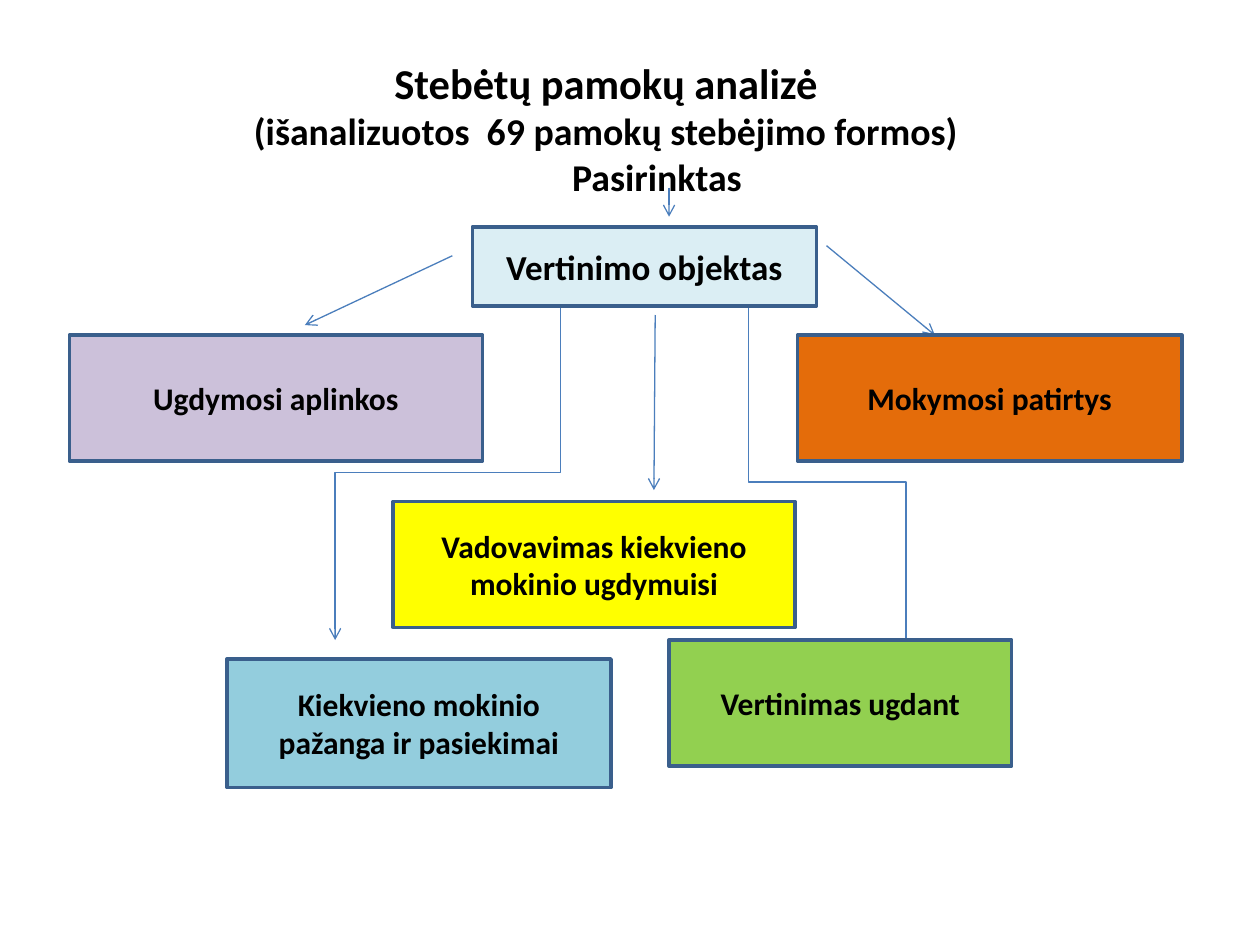
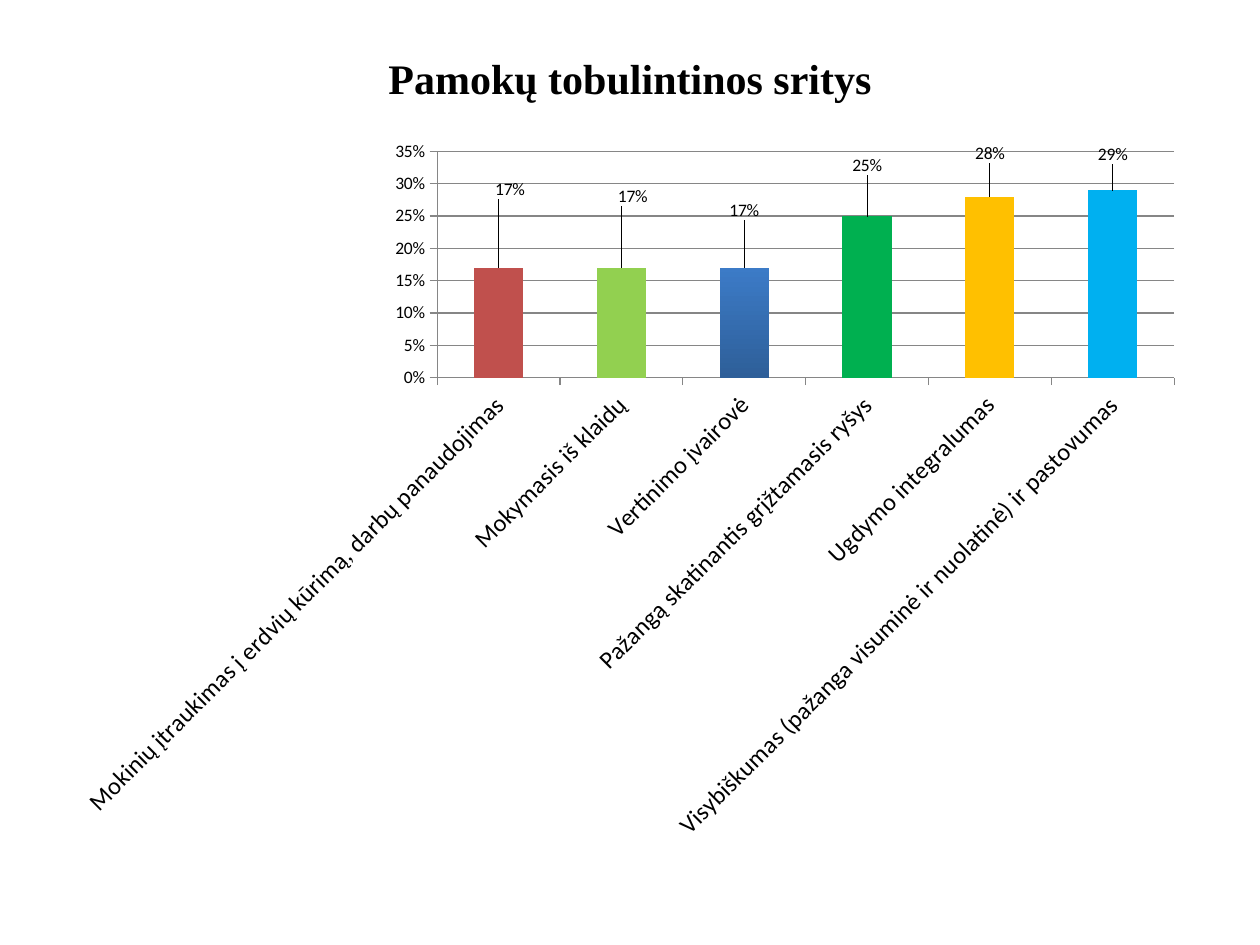
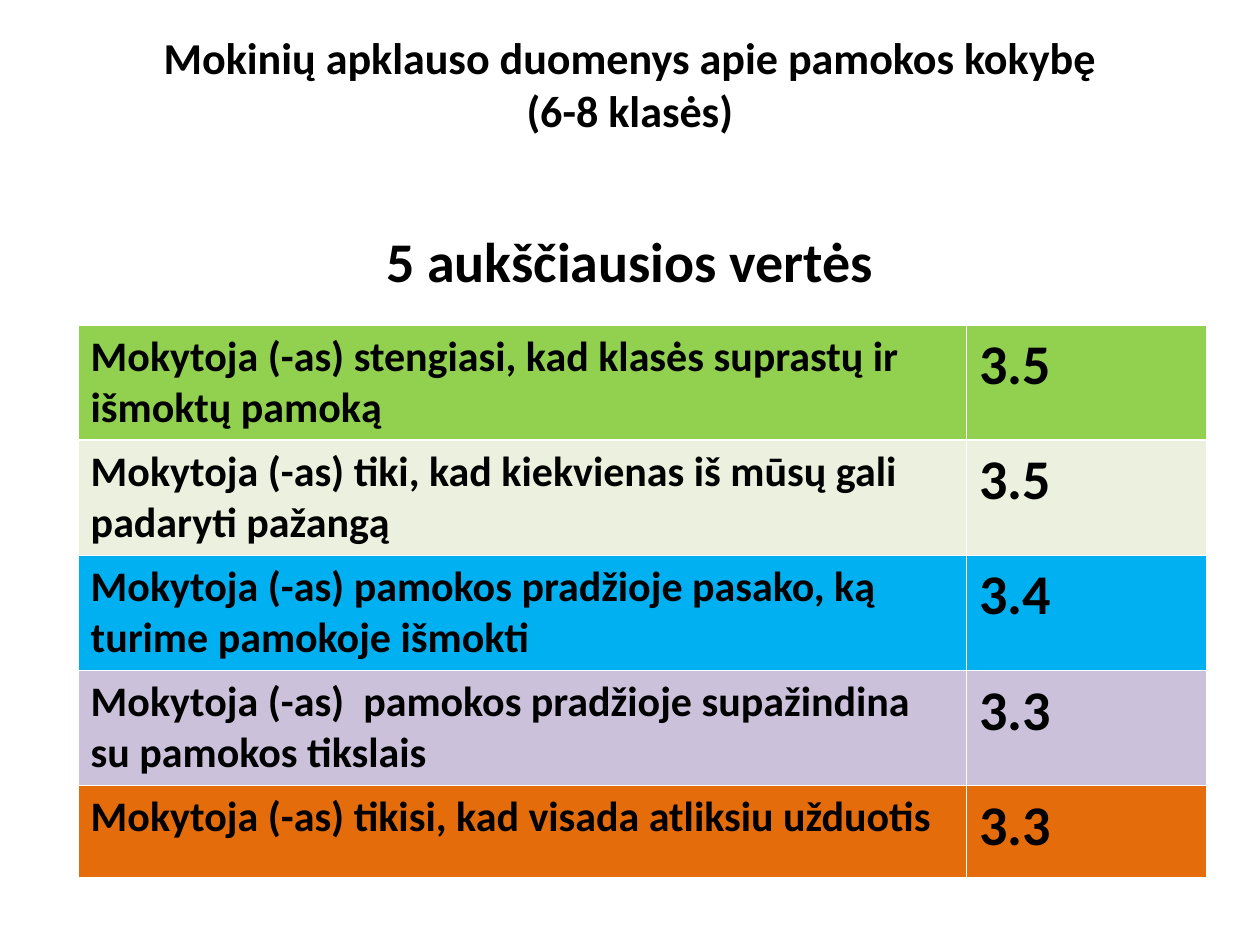
import pptx
import pptx.chart.data
import pptx.dml.color
import pptx.enum.chart
import pptx.enum.shapes
import pptx.enum.text
import pptx.oxml
import pptx.oxml.ns
import pptx.util
from pptx.util import Inches, Pt

BLACK, GREEN, ORANGE, SKY, LILAC = "000000", "92D050", "E46C0A", "00B0F0", "CCC1DA"
BOX_LINE, ARROW, AXIS = "3A5F8C", "4B7EBC", "868686"
FONT = "Calibri"
CENTER = pptx.enum.text.PP_ALIGN.CENTER
MIDDLE = pptx.enum.text.MSO_ANCHOR.MIDDLE
qn = pptx.oxml.ns.qn


def rgb(value):
    return pptx.dml.color.RGBColor.from_string(value)


def write(tf, text, sizes, align=CENTER, font=FONT):
    """Fill a frame with bold black text; sizes go line by line, the last repeats."""
    tf.text = text
    tf.word_wrap = True
    for i, p in enumerate(tf.paragraphs):
        p.alignment = align
        for r in p.runs:
            r.font.name = font
            r.font.size = Pt(sizes[min(i, len(sizes) - 1)])
            r.font.bold = True
            r.font.color.rgb = rgb(BLACK)


prs = pptx.Presentation()
prs.slide_width, prs.slide_height = Inches(10), Inches(7.5)

# Slides and their titles: layout, position, text, sizes, font
titles = [
    (5, (0.31, 0.39, 9, 1.25),
     "Stebėtų pamokų analizė\n(išanalizuotos  69 pamokų stebėjimo formos)\nPasirinktas",
     [24.3, 21.6], FONT),
    (5, (0.5, 0.3, 9, 0.64), "Pamokų tobulintinos sritys", [24], "Times New Roman"),
    (1, (0.5, 0.15, 9, 1.02),
     "Mokinių apklauso duomenys apie pamokos kokybę\n(6-8 klasės)", [25.2], FONT),
]
for layout, box, text, sizes, font in titles:
    s = prs.slides.add_slide(prs.slide_layouts[layout])
    sp = s.shapes.title
    sp.left, sp.top, sp.width, sp.height = [Inches(v) for v in box]
    write(sp.text_frame, text, sizes, font=font)
    sp.text_frame.auto_size = pptx.enum.text.MSO_AUTO_SIZE.NONE
    sp.text_frame.vertical_anchor = MIDDLE
diagram, chart_slide, survey = prs.slides

# Slide 1: the last title line stands right of centre
p = diagram.shapes.title.text_frame.paragraphs[2]
p._p.get_or_add_pPr().set("marL", str(Inches(0.81)))

# Slide 1: arrows, start and end; elbows leave vertically
arrows = [
    (3.59, 2.03, 2.42, 2.58, False),
    (6.56, 1.95, 7.42, 2.66, False),
    (5.31, 1.49, 5.31, 1.72, False),
    (5.2, 2.5, 5.19, 3.89, False),
    (5.94, 2.42, 7.19, 5.23, True),
    (4.45, 2.42, 2.66, 5.08, True),
]
kinds = pptx.enum.shapes.MSO_CONNECTOR
for x1, y1, x2, y2, elbow in arrows:
    if elbow:
        # Turned a quarter back here, then rotated by 90 degrees
        cx, cy, dx, dy = (x1 + x2) / 2, (y1 + y2) / 2, x2 - x1, y2 - y1
        x1, y1, x2, y2 = cx - dy / 2, cy + dx / 2, cx + dy / 2, cy - dx / 2
    cxn = diagram.shapes.add_connector(kinds.ELBOW if elbow else kinds.STRAIGHT,
                                       Inches(x1), Inches(y1), Inches(x2), Inches(y2))
    cxn.line.color.rgb = rgb(ARROW)
    cxn.line.width = Pt(0.75)
    sppr = cxn._element.spPr
    if elbow:
        sppr.find(qn("a:xfrm")).set("rot", "5400000")
    tail = pptx.oxml.parse_xml(f'<a:tailEnd {pptx.oxml.ns.nsdecls("a")} type="arrow"/>')
    sppr.find(qn("a:ln")).append(tail)
    sppr.append(pptx.oxml.parse_xml(f'<a:effectLst {pptx.oxml.ns.nsdecls("a")}/>'))

# Slide 1: boxes
boxes = [
    (3.75, 1.8, 2.73, 0.63, "DBEEF4", 20, "Vertinimo objektas"),
    (0.55, 2.66, 3.28, 1, LILAC, 18, "Ugdymosi aplinkos"),
    (3.12, 3.98, 3.19, 1, "FFFF00", 18, "Vadovavimas kiekvieno mokinio ugdymuisi"),
    (6.33, 2.66, 3.05, 1, ORANGE, 18, "Mokymosi patirtys"),
    (5.31, 5.08, 2.72, 1, GREEN, 18, "Vertinimas ugdant"),
    (1.8, 5.23, 3.05, 1.02, "93CDDD", 18, "Kiekvieno mokinio\npažanga ir pasiekimai"),
]
for x, y, w, h, fill, size, text in boxes:
    sp = diagram.shapes.add_shape(pptx.enum.shapes.MSO_SHAPE.RECTANGLE,
                                  Inches(x), Inches(y), Inches(w), Inches(h))
    sp.shadow.inherit = False
    sp.fill.solid()
    sp.fill.fore_color.rgb = rgb(fill)
    sp.line.color.rgb = rgb(BOX_LINE)
    sp.line.width = Pt(2)
    write(sp.text_frame, text, [size])
    sp.text_frame.vertical_anchor = MIDDLE

# Slide 2: category, value, colour (None for the gradient), label shift
areas = [
    ("Mokinių įtraukimas į erdvių kūrimą, darbų panaudojimas", 0.17, "C0504D", 0.01, -0.09),
    ("Mokymasis iš klaidų", 0.17, GREEN, 0.01, -0.08),
    ("Vertinimo įvairovė", 0.17, None, 0, -0.06),
    ("Pažangą skatinantis grįžtamasis ryšys", 0.25, "00B050", 0, -0.05),
    ("Ugdymo integralumas", 0.28, "FFC000", 0, -0.04),
    ("Visybiškumas (pažanga visuminė ir nuolatinė) ir pastovumas", 0.29, SKY, 0, -0.03),
]
data = pptx.chart.data.CategoryChartData(number_format="0%")
data.categories = [area[0] for area in areas]
data.add_series("Series 1", [area[1] for area in areas])
chart = chart_slide.shapes.add_chart(
    pptx.enum.chart.XL_CHART_TYPE.COLUMN_CLUSTERED,
    Inches(0.5), Inches(1.09), Inches(9), Inches(5.61), data).chart
chart.has_legend = False
chart.has_title = False
chart.font.name = FONT
chart.font.size = Pt(10)
chart.font.color.rgb = rgb(BLACK)

# Slide 2: axes
cat, val = chart.category_axis, chart.value_axis
val.minimum_scale, val.maximum_scale, val.major_unit = 0, 0.35, 0.05
val.tick_labels.number_format = "0%"
val.tick_labels.number_format_is_linked = False
val.has_major_gridlines = True
for line in (cat.format.line, val.format.line, val.major_gridlines.format.line):
    line.color.rgb = rgb(AXIS)
    line.width = Pt(0.75)
for axis in (cat, val):
    axis.major_tick_mark = pptx.enum.chart.XL_TICK_MARK.OUTSIDE
cat.tick_labels.font.size = Pt(14)
cat._element.find(qn("c:txPr")).find(qn("a:bodyPr")).set("rot", "-2700000")

# Slide 2: columns and their raised labels
plot = chart.plots[0]
plot.gap_width = 150
plot.vary_by_categories = False
series = plot.series[0]
series.format.fill.solid()
series.format.fill.fore_color.rgb = rgb("4F81BD")
labels = plot.series[0].data_labels
labels.show_value = True
labels.number_format = "0%"
labels.number_format_is_linked = False
labels.position = pptx.enum.chart.XL_LABEL_POSITION.OUTSIDE_END
for i, (name, value, color, dx, dy) in enumerate(areas):
    fill = series.points[i].format.fill
    if color:
        fill.solid()
        fill.fore_color.rgb = rgb(color)
    else:
        fill.gradient()
        fill.gradient_angle = 90
        for stop, shade in zip(fill.gradient_stops, ("2E5F99", "3C7BC7")):
            stop.color.rgb = rgb(shade)
    label = series.points[i].data_label
    label.position = pptx.enum.chart.XL_LABEL_POSITION.OUTSIDE_END
    dlbl = labels._element.findall(qn("c:dLbl"))[i]
    dlbl.find(qn("c:idx")).addnext(pptx.oxml.parse_xml(
        f'<c:layout {pptx.oxml.ns.nsdecls("c")}><c:manualLayout>'
        f'<c:x val="{dx}"/><c:y val="{dy}"/></c:manualLayout></c:layout>'))

# Slide 2: plot area leaves room for the slanted names
area = chart._chartSpace.chart.plotArea
for old in area.findall(qn("c:layout")):
    area.remove(old)
area.insert(0, pptx.oxml.parse_xml(
    f'<c:layout {pptx.oxml.ns.nsdecls("c")}><c:manualLayout><c:layoutTarget val="inner"/>'
    '<c:xMode val="edge"/><c:yMode val="edge"/><c:x val="0.33"/><c:y val="0.02"/>'
    '<c:w val="0.65"/><c:h val="0.32"/></c:manualLayout></c:layout>'))

# Slide 3: heading above the table
sp = survey.placeholders[1]
sp.left, sp.top, sp.width, sp.height = Inches(0.5), Inches(1.75), Inches(9), Inches(4.95)
write(sp.text_frame, "5 aukščiausios vertės", [32])
ppr = sp.text_frame.paragraphs[0]._p.get_or_add_pPr()
ppr.set("marL", "0")
ppr.set("indent", "0")
ppr.append(pptx.oxml.parse_xml(f'<a:buNone {pptx.oxml.ns.nsdecls("a")}/>'))

# Slide 3: table of the highest values
rows = [
    ("Mokytoja (-as) stengiasi, kad klasės suprastų ir išmoktų pamoką", "3.5", GREEN),
    ("Mokytoja (-as) tiki, kad kiekvienas iš mūsų gali padaryti pažangą", "3.5", "EBF1DE"),
    ("Mokytoja (-as) pamokos pradžioje pasako, ką turime pamokoje išmokti", "3.4", SKY),
    ("Mokytoja (-as)  pamokos pradžioje supažindina su pamokos tikslais", "3.3", LILAC),
    ("Mokytoja (-as) tikisi, kad visada atliksiu užduotis", "3.3", ORANGE),
]
table = survey.shapes.add_table(len(rows), 2, Inches(0.62), Inches(2.58),
                                Inches(8.96), Inches(0.73 * len(rows))).table
table.horz_banding = False
table.columns[0].width, table.columns[1].width = Inches(7.05), Inches(1.91)
for i, (statement, score, color) in enumerate(rows):
    for j, (text, size) in enumerate([(statement, 24), (score, 32)]):
        cell = table.cell(i, j)
        cell.fill.solid()
        cell.fill.fore_color.rgb = rgb(color)
        write(cell.text_frame, text, [size], align=pptx.enum.text.PP_ALIGN.LEFT)

prs.save("out.pptx")
